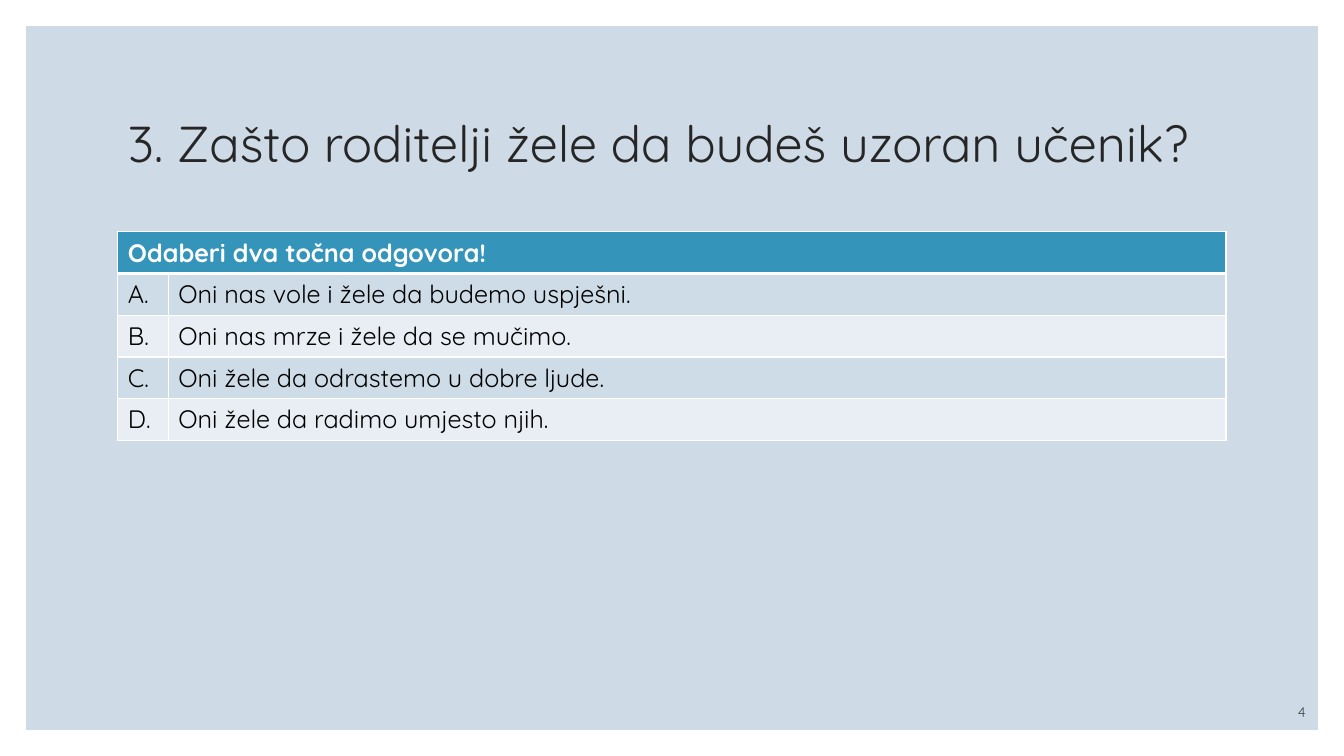
from dataclasses import dataclass

from lxml import etree
from pptx import Presentation
from pptx.dml.color import RGBColor
from pptx.enum import shapes, text
from pptx.oxml import ns
from pptx.util import Pt


@dataclass(frozen=True)
class Theme:
    font: str = "Quicksand"
    white: str = "FFFFFF"
    panel: str = "CEDBE6"
    header: str = "3494BA"
    bands: tuple = ("CEDCE7", "E8EEF3")
    title_ink: str = "262626"
    body_ink: str = "000000"
    number_ink: str = "404040"
    title_size: float = 36
    body_size: float = 18
    number_size: float = 10


THEME = Theme()
TITLE = "3. Zašto roditelji žele da budeš uzoran učenik?"
PROMPT = "Odaberi dva točna odgovora!"
ANSWERS = (
    ("A.", "Oni nas vole i žele da budemo uspješni."),
    ("B.", "Oni nas mrze i žele da se mučimo."),
    ("C.", "Oni žele da odrastemo u dobre ljude."),
    ("D.", "Oni žele da radimo umjesto njih."),
)


def paint(fill, color):
    fill.solid()
    fill.fore_color.rgb = RGBColor.from_string(color)


def write(tf, content, size, color, bold=False, **paragraph_format):
    p = tf.paragraphs[0]
    for name, value in paragraph_format.items():
        setattr(p, name, value)
    r = p.add_run()
    r.text = content
    for name, value in dict(name=THEME.font, size=Pt(size), bold=bold).items():
        setattr(r.font, name, value)
    r.font.color.rgb = RGBColor.from_string(color)


def set_borders(cell, **widths):
    """Draw white cell borders, 1 pt wide unless a side's width is given."""
    tc_pr = cell._tc.get_or_add_tcPr()
    for side in "LRTB":
        ln = etree.SubElement(tc_pr, ns.qn(f"a:ln{side}"), w=str(Pt(widths.get(side, 1))))
        fill = etree.SubElement(ln, ns.qn("a:solidFill"))
        etree.SubElement(fill, ns.qn("a:srgbClr"), val=THEME.white)


def add_panel(s, box):
    """Add the tinted background panel behind the title."""
    panel = s.shapes.add_shape(shapes.MSO_SHAPE.RECTANGLE, *map(Pt, box))
    panel.shadow.inherit = False
    paint(panel.fill, THEME.panel)
    panel.line.fill.background()
    s.shapes.title.element.addprevious(panel.element)


def add_title(s, box):
    title = s.shapes.title
    for name, value in zip(("left", "top", "width", "height"), box):
        setattr(title, name, Pt(value))
    tf = title.text_frame
    tf.auto_size = text.MSO_AUTO_SIZE.NONE
    tf.vertical_anchor = text.MSO_ANCHOR.MIDDLE
    write(tf, TITLE, THEME.title_size, THEME.title_ink,
          alignment=text.PP_ALIGN.LEFT, line_spacing=0.9)


def add_answers(s, box, letter_width=36):
    rows = len(ANSWERS) + 1
    table = s.shapes.add_table(rows, 2, *map(Pt, box)).table
    table.columns[0].width = Pt(letter_width)
    table.columns[1].width = Pt(box[2] - letter_width)

    for cell in table.rows[0].cells:
        set_borders(cell, B=3)
        paint(cell.fill, THEME.header)
    table.cell(0, 0).merge(table.cell(0, 1))
    write(table.cell(0, 0).text_frame, PROMPT, THEME.body_size, THEME.white, bold=True)

    for row, answer in enumerate(ANSWERS, 1):
        for cell, content in zip(table.rows[row].cells, answer):
            set_borders(cell, T=3 if row == 1 else 1)
            paint(cell.fill, THEME.bands[(row - 1) % 2])
            write(cell.text_frame, content, THEME.body_size, THEME.body_ink)


def add_slide_number(s, box, number):
    tf = s.shapes.add_textbox(*map(Pt, box)).text_frame
    tf.word_wrap = True
    tf.vertical_anchor = text.MSO_ANCHOR.BOTTOM
    write(tf, str(number), THEME.number_size, THEME.number_ink,
          alignment=text.PP_ALIGN.RIGHT)


def add_quiz_slide(prs, width, height):
    s = prs.slides.add_slide(prs.slide_layouts[5])
    paint(s.background.fill, THEME.white)
    frame, margin = 18.7, 84.2
    content_width = width - 2 * margin
    add_panel(s, (frame, frame, width - 2 * frame, height - 2 * frame))
    add_title(s, (margin, 50.4, content_width, 108))
    add_answers(s, (margin, 165.6, content_width, 146))
    add_slide_number(s, (824.4, 496.8, 115.2, 21.6), 4)


def main():
    width, height = 960, 540
    prs = Presentation()
    prs.slide_width, prs.slide_height = Pt(width), Pt(height)
    add_quiz_slide(prs, width, height)
    prs.save("out.pptx")


if __name__ == "__main__":
    main()
